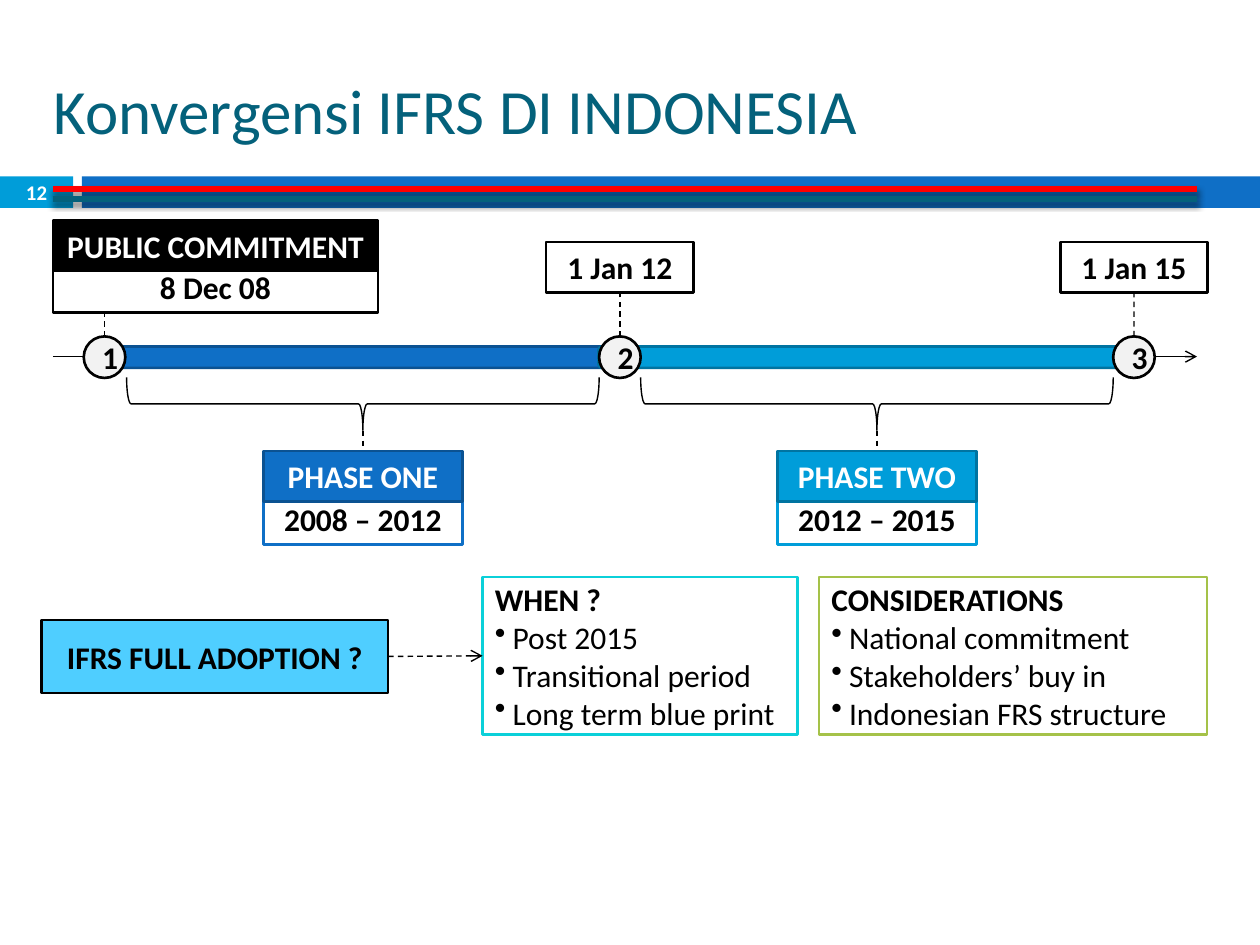
from dataclasses import dataclass

from lxml.etree import SubElement
from pptx import Presentation
from pptx.dml.color import RGBColor as Color
from pptx.enum.dml import MSO_LINE_DASH_STYLE as Dash
from pptx.enum.shapes import MSO_CONNECTOR as Connector, MSO_SHAPE as Shape
from pptx.enum.text import MSO_ANCHOR as Anchor, PP_ALIGN as Align
from pptx.oxml.ns import qn
from pptx.util import Inches, Pt


@dataclass(frozen=True)
class Theme:
    font: str = "Calibri"
    title_size: float = 36
    body_size: float = 18
    number_size: float = 11.9
    outline: float = 1.5
    hairline: float = 0.79
    rule: float = 3.75
    black: str = "000000"
    white: str = "FFFFFF"
    grey: str = "F2F2F2"
    red: str = "FF0000"
    teal: str = "04617B"
    blue: str = "0F6FC6"
    dark_blue: str = "0B5292"
    cyan: str = "009DD9"
    dark_cyan: str = "0074A1"
    sky: str = "4FCEFF"
    aqua: str = "0BD0D9"
    green: str = "A5C249"


class SlideBuilder:
    """Draws styled elements on the current slide."""

    def __init__(self, page, theme):
        self.page = page
        self.theme = theme

    def fill_text(self, box, lines, color, size=None, bold=True, align=Align.CENTER,
                  anchor=Anchor.MIDDLE):
        frame = box.text_frame
        frame.word_wrap = True
        frame.vertical_anchor = anchor
        for index, line in enumerate(lines):
            para = frame.paragraphs[0] if index == 0 else frame.add_paragraph()
            para.text = line
            para.alignment = align
            if index:
                self.bullet(para)
            para.font.name = self.theme.font
            para.font.size = Pt(size or self.theme.body_size)
            para.font.bold = bold and index == 0
            para.font.color.rgb = Color.from_string(color)

    def bullet(self, para):
        properties = para._p.get_or_add_pPr()
        indent = Inches(0.14)
        properties.set("marL", str(indent))
        properties.set("indent", str(-indent))
        SubElement(properties, qn("a:buChar"), char="•")

    def text(self, left, top, width, height, line, color, size, **style):
        box = self.page.shapes.add_textbox(
            Inches(left), Inches(top), Inches(width), Inches(height))
        self.fill_text(box, [line], color, size, **style)

    def shape(self, kind, left, top, width, height, fill=None, line=None, weight=None):
        box = self.page.shapes.add_shape(
            kind, Inches(left), Inches(top), Inches(width), Inches(height))
        box.shadow.inherit = False
        if fill:
            box.fill.solid()
            box.fill.fore_color.rgb = Color.from_string(fill)
        else:
            box.fill.background()
        if line:
            box.line.color.rgb = Color.from_string(line)
            box.line.width = Pt(weight or self.theme.outline)
        else:
            box.line.fill.background()
        return box

    def label(self, left, top, width, line, fill, outline, color):
        box = self.shape(Shape.RECTANGLE, left, top, width, 0.4, fill, outline)
        self.fill_text(box, [line], color, anchor=Anchor.TOP)
        return box

    def panel(self, left, width, lines, outline):
        box = self.shape(Shape.RECTANGLE, left, 4.58, width, 1.25, self.theme.white, outline)
        self.fill_text(box, lines, self.theme.black, align=Align.LEFT)
        return box

    def marker(self, center, number):
        circle = self.shape(Shape.OVAL, center - 0.165, 2.67, 0.33, 0.33,
                            self.theme.grey, self.theme.black)
        self.fill_text(circle, [number], self.theme.black)

    def brace(self, center):
        brace = self.shape(Shape.LEFT_BRACE, center - 0.21, 1.33, 0.42, 3.75,
                           line=self.theme.black, weight=self.theme.hairline)
        brace.rotation = 270

    def line(self, start, end, color=None, weight=None, dashed=False, arrow=False,
             shadow=False):
        line = self.page.shapes.add_connector(
            Connector.STRAIGHT, *(Inches(value) for value in (*start, *end)))
        line.line.color.rgb = Color.from_string(color or self.theme.black)
        line.line.width = Pt(weight or self.theme.hairline)
        if dashed:
            line.line.dash_style = Dash.DASH
        if arrow:
            SubElement(line.line._get_or_add_ln(), qn("a:tailEnd"), type="arrow")
        effects = SubElement(line._element.spPr, qn("a:effectLst"))
        if shadow:
            outer = SubElement(effects, qn("a:outerShdw"), blurRad=str(Pt(3)),
                               dist=str(Pt(2.4)), dir="5400000", rotWithShape="0")
            shade = SubElement(outer, qn("a:srgbClr"), val=self.theme.black)
            SubElement(shade, qn("a:alpha"), val="45000")
        return line


def draw_header(builder, theme):
    builder.shape(Shape.RECTANGLE, 0, 1.4, 0.58, 0.25, theme.cyan)
    builder.shape(Shape.RECTANGLE, 0.65, 1.4, 9.35, 0.25, theme.blue)
    builder.text(0.33, 0.58, 9.67, 0.57, "Konvergensi IFRS DI INDONESIA",
                 theme.teal, theme.title_size, bold=False, align=Align.LEFT)
    builder.text(0, 1.39, 0.58, 0.27, "12", theme.white, theme.number_size)
    for top, color in ((1.5, theme.red), (1.58, theme.teal)):
        builder.line((0.42, top), (9.5, top), color, theme.rule, shadow=True)


def draw_timeline(builder, theme):
    centers = [0.83, 4.92, 9]
    builder.line((0.42, 2.83), (9.5, 2.83), arrow=True)
    builder.line((centers[0], 2.67), (centers[0], 2.17), dashed=True)
    phases = (
        ("PHASE ONE", "2008 – 2012", 2.88, 0.92, 3.92, theme.blue, theme.dark_blue),
        ("PHASE TWO", "2012 – 2015", 6.96, 4.75, 4.25, theme.cyan, theme.dark_cyan),
    )
    for name, years, center, left, width, fill, outline in phases:
        builder.shape(Shape.ROUNDED_RECTANGLE, left, 2.75, width, 0.17, fill, outline)
        builder.brace(center)
        years_box = builder.label(center - 0.79, 3.92, 1.58, years, theme.white, fill,
                                  theme.black)
        stem = builder.line((center, 3.42), (center, 3.92), dashed=True)
        stem.end_connect(years_box, 0)
        builder.label(center - 0.79, 3.58, 1.58, name, fill, outline, theme.white)
    for number, center in enumerate(centers, 1):
        builder.marker(center, str(number))
    for center, date in zip(centers[1:], ("1 Jan 12", "1 Jan 15")):
        date_box = builder.label(center - 0.585, 1.92, 1.17, date, theme.white,
                                 theme.black, theme.black)
        stem = builder.line((center, 2.67), (center, 2.32), dashed=True)
        stem.end_connect(date_box, 2)
    builder.label(0.42, 2.08, 2.58, "8 Dec 08", theme.white, theme.black, theme.black)
    builder.label(0.42, 1.75, 2.58, "PUBLIC COMMITMENT", theme.black, theme.black,
                  theme.white)


def draw_adoption(builder, theme):
    question = builder.shape(Shape.RECTANGLE, 0.33, 4.92, 2.75, 0.58, theme.sky, theme.black)
    builder.fill_text(question, ["IFRS FULL ADOPTION ?"], theme.black)
    timing = builder.panel(3.83, 2.5, ["WHEN ?", "Post 2015", "Transitional period",
                                       "Long term blue print"], theme.aqua)
    arrow = builder.line((3.08, 5.21), (3.83, 5.21), dashed=True, arrow=True)
    arrow.begin_connect(question, 3)
    arrow.end_connect(timing, 1)
    builder.panel(6.5, 3.08, ["CONSIDERATIONS", "National commitment", "Stakeholders’ buy in",
                              "Indonesian FRS structure"], theme.green)


def main():
    deck = Presentation()
    deck.slide_width, deck.slide_height = Inches(10), Inches(7.5)
    theme = Theme()
    builder = SlideBuilder(deck.slides.add_slide(deck.slide_layouts[6]), theme)
    draw_header(builder, theme)
    draw_timeline(builder, theme)
    draw_adoption(builder, theme)
    deck.save("out.pptx")


if __name__ == "__main__":
    main()
